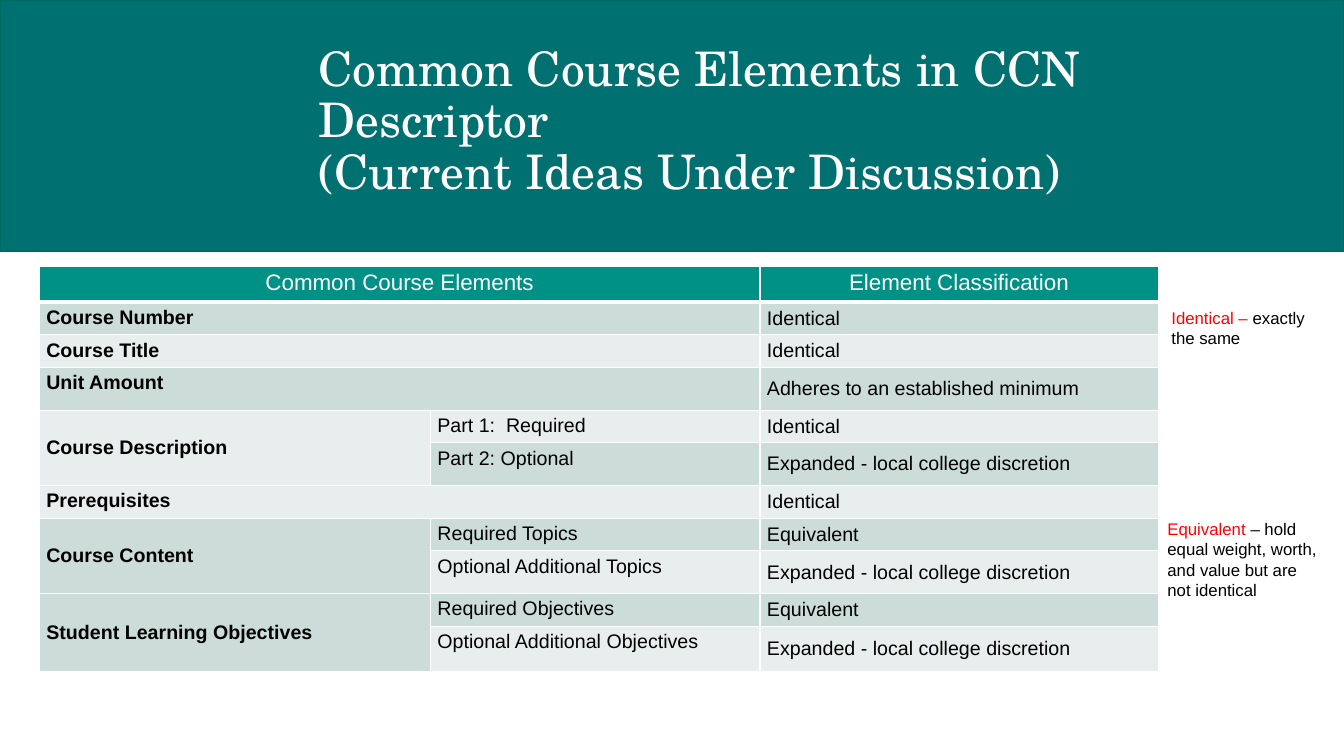
"""Build the slide on common course elements in a CCN descriptor."""
from lxml.etree import SubElement
from pptx import Presentation
from pptx.dml.color import RGBColor as RGB
from pptx.enum.shapes import MSO_SHAPE as SHAPE
from pptx.enum.text import MSO_ANCHOR as ANCHOR, PP_ALIGN as ALIGN
from pptx.oxml.ns import qn
from pptx.util import Inches, Pt

WHITE = RGB(0xFF, 0xFF, 0xFF)
BLACK = RGB(0, 0, 0)
RED = RGB(0xFF, 0, 0)
BANNER = RGB(0x00, 0x70, 0x71)
BANNER_EDGE = RGB(0x00, 0x6B, 0x63)
HEADER = RGB(0x00, 0x91, 0x86)
DARK_BAND = RGB(0xCC, 0xDC, 0xD9)
LIGHT_BAND = RGB(0xE7, 0xEE, 0xED)

COLS, ROWS = 160, 90
LOW, TALL, LAST = 3.72, 5.1, 5.45
COL_WIDTHS = (46.56, 39.24, 47.4)
HEADINGS = ("Common Course Elements", "", "Element Classification")
ELEMENTS = (
    ("Course Number", "", "Identical", LOW, DARK_BAND),
    ("Course Title", "", "Identical", LOW, LIGHT_BAND),
    ("Unit Amount", "", "Adheres to an established minimum", TALL, DARK_BAND),
    ("Course Description", "Part 1:  Required", "Identical", LOW, LIGHT_BAND),
    ("", "Part 2: Optional", "Expanded - local college discretion", TALL, DARK_BAND),
    ("Prerequisites", "", "Identical", LOW, LIGHT_BAND),
    ("Course Content", "Required Topics", "Equivalent", LOW, DARK_BAND),
    ("", "Optional Additional Topics", "Expanded - local college discretion", TALL, LIGHT_BAND),
    ("Student Learning Objectives", "Required Objectives", "Equivalent", LOW, DARK_BAND),
    ("", "Optional Additional Objectives", "Expanded - local college discretion", LAST, LIGHT_BAND),
)


class Deck:
    """Hold the style and the current slide, measured on a grid."""

    def __init__(self):
        self.prs = Presentation()
        self.prs.slide_width, self.prs.slide_height = Inches(13.33), Inches(7.5)
        self.slide = self.prs.slides.add_slide(self.prs.slide_layouts[6])
        self.font, self.title_font = "Arial", "TeX Gyre Schola"

    def x(self, n):
        return round(self.prs.slide_width * n / COLS)

    def y(self, n):
        return round(self.prs.slide_height * n / ROWS)

    def box(self, x, y, w, h):
        return self.x(x), self.y(y), self.x(w), self.y(h)

    def set_font(self, p, name, size, color=None, bold=False):
        p.font.name, p.font.size, p.font.bold = name, Pt(size), bold
        if color is not None:
            p.font.color.rgb = color

    def banner(self, *place):
        sp = self.slide.shapes.add_shape(SHAPE.RECTANGLE, *self.box(*place))
        sp.shadow.inherit = False
        sp.fill.solid()
        sp.fill.fore_color.rgb = BANNER
        sp.line.color.rgb, sp.line.width = BANNER_EDGE, Pt(1)

    def text_frame(self, *place):
        tf = self.slide.shapes.add_textbox(*self.box(*place)).text_frame
        tf.word_wrap = True
        return tf

    def title(self, text, *place):
        tf = self.text_frame(*place)
        tf.text = text
        p = tf.paragraphs[0]
        p.line_spacing = 0.9
        self.set_font(p, self.title_font, 34, WHITE)

    def note(self, term, meaning, *place):
        p = self.text_frame(*place).paragraphs[0]
        self.set_font(p, self.font, 12)
        for text, color in ((term, RED), (meaning, BLACK)):
            r = p.add_run()
            r.text = text
            r.font.color.rgb = color

    def cell(self, cell, text, fill, size, color, bold=False, align=ALIGN.LEFT,
             anchor=ANCHOR.TOP, bottom=1):
        tc_pr = cell._tc.get_or_add_tcPr()
        for side, width in (("L", 1), ("R", 1), ("T", 1), ("B", bottom)):
            ln = SubElement(tc_pr, qn(f"a:ln{side}"), w=str(Pt(width)))
            solid = SubElement(ln, qn("a:solidFill"))
            SubElement(solid, qn("a:srgbClr"), val=str(WHITE))
        cell.fill.solid()
        cell.fill.fore_color.rgb = fill
        cell.margin_left = cell.margin_right = self.x(0.84)
        cell.margin_top = cell.margin_bottom = self.y(0.54)
        cell.vertical_anchor = anchor
        p = cell.text_frame.paragraphs[0]
        p.text, p.alignment = text, align
        self.set_font(p, self.font, size, color, bold)

    def table(self, x, y, header_height):
        heights = [header_height] + [row[3] for row in ELEMENTS]
        place = self.box(x, y, sum(COL_WIDTHS), sum(heights))
        t = self.slide.shapes.add_table(len(heights), len(COL_WIDTHS), *place).table
        t.first_row = t.horz_banding = False
        for col, width in zip(t.columns, COL_WIDTHS):
            col.width = self.x(width)
        for row, height in zip(t.rows, heights):
            row.height = self.y(height)
        for j, text in enumerate(HEADINGS):
            self.cell(t.cell(0, j), text, HEADER, 16, WHITE, align=ALIGN.CENTER, bottom=3)
        t.cell(0, 0).merge(t.cell(0, 1))
        for i, (name, part, kind, _, fill) in enumerate(ELEMENTS, 1):
            for j, text in enumerate((name, part, kind)):
                middle = j == 2 or (j == 0 and part)
                self.cell(t.cell(i, j), text, fill, 14, BLACK, bold=j == 0,
                          anchor=ANCHOR.MIDDLE if middle else ANCHOR.TOP)
            if name:
                t.cell(i, 0).merge(t.cell(i + 1, 0) if part else t.cell(i, 1))


def main():
    deck = Deck()
    deck.banner(0, 0, COLS, 29.88)
    deck.title("Common Course Elements in CCN Descriptor \v(Current Ideas Under Discussion)",
               36.72, 4.8, 120.4, 22.08)
    deck.table(4.68, 31.68, 4.1)
    deck.note("Identical – ", "exactly the same", 138.27, 36, 20.52, 6)
    deck.note("Equivalent", " – hold equal weight, worth, and value but are not identical",
              137.8, 61.2, 20.88, 10.92)
    deck.prs.save("out.pptx")


if __name__ == "__main__":
    main()
